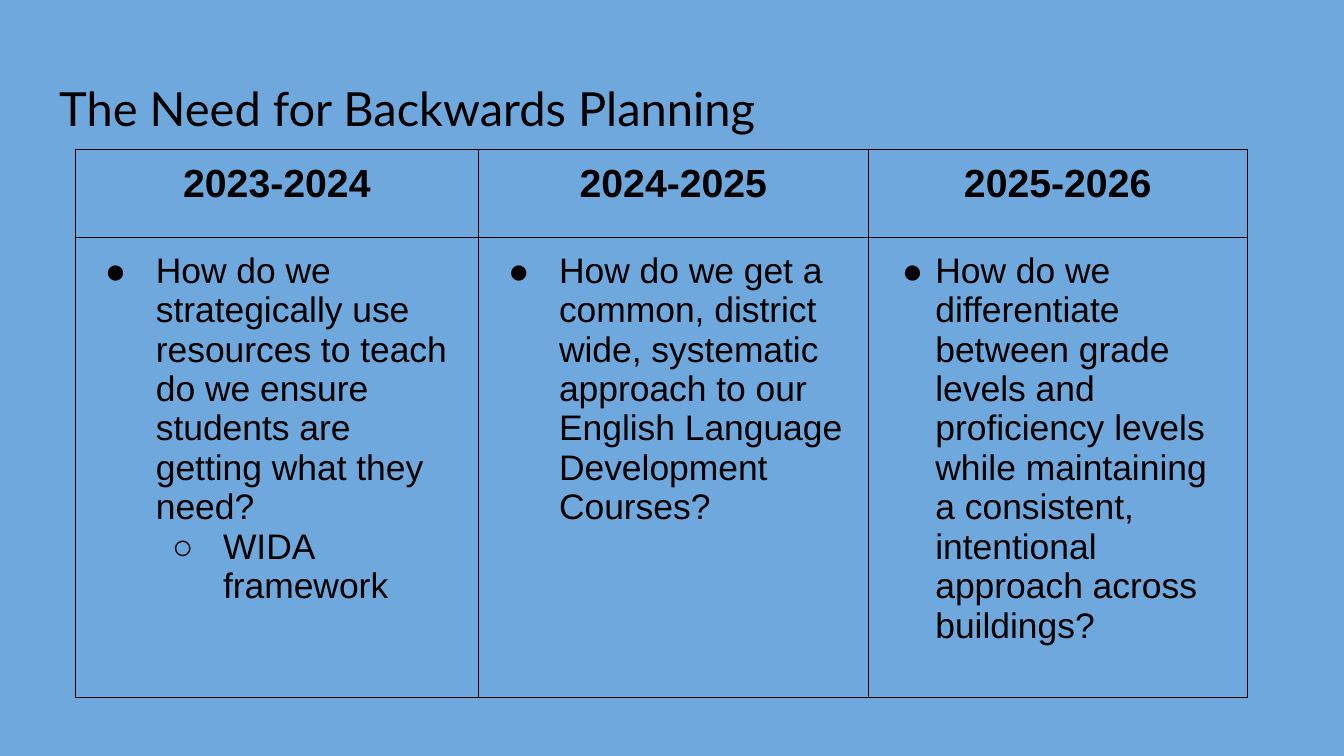
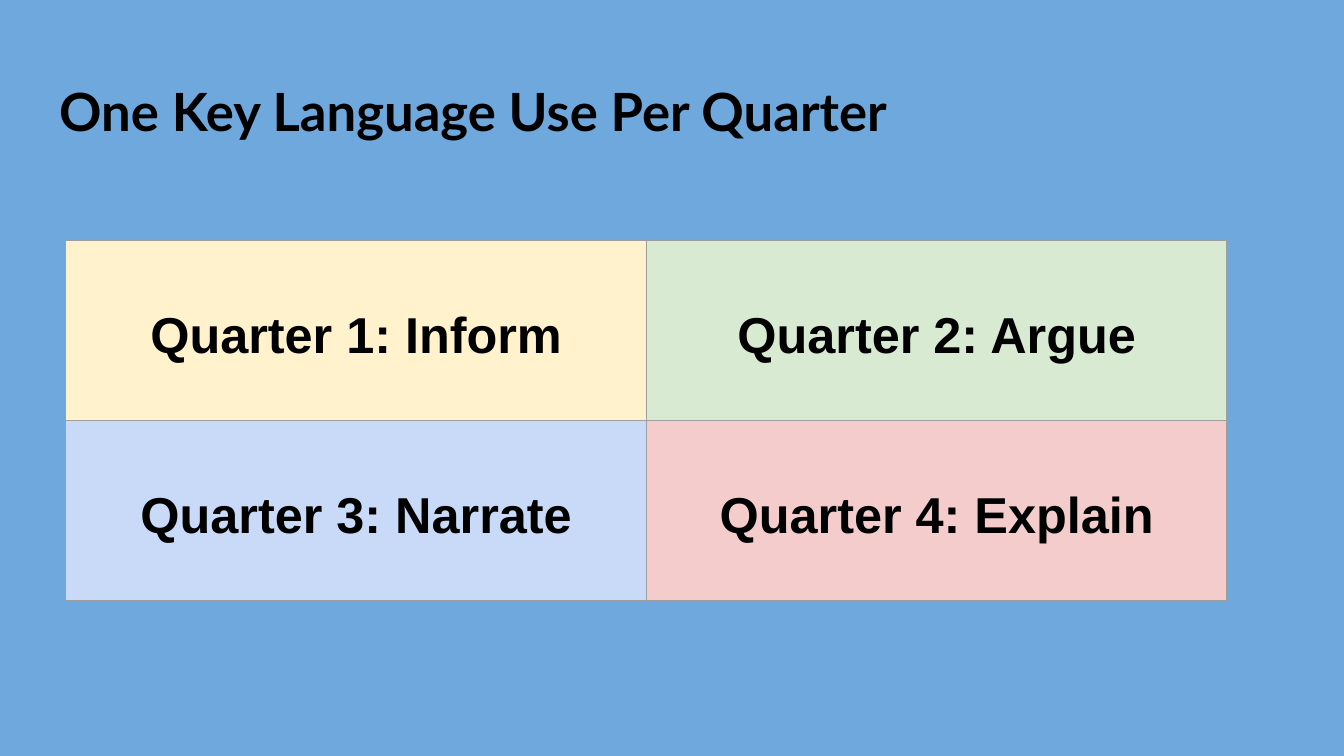
from lxml import etree
from pptx import Presentation
from pptx import util as u
from pptx.dml.color import RGBColor
from pptx.enum import text
from pptx.oxml.ns import qn

# Shared look
SKY = RGBColor(0x6F, 0xA8, 0xDC)
BLACK = RGBColor(0, 0, 0)
GREY = RGBColor(0x9E, 0x9E, 0x9E)
CREAM = RGBColor(0xFF, 0xF2, 0xCC)
GREEN = RGBColor(0xD9, 0xEA, 0xD3)
BLUE = RGBColor(0xC9, 0xDA, 0xF8)
PINK = RGBColor(0xF4, 0xCC, 0xCC)
SLIDE_W = 10
SLIDE_H = SLIDE_W * 9 / 16
TITLE_BOX = (0.34, 0.49, 9.32, 0.63)
TITLE_FONT, BODY_FONT = "Lato", "Arial"
PAD = 0.1
BULLETS = "●○"

# Content: year, left padding, bullet step, hanging indent, (level, question)
PLAN_TITLE = "The Need for Backwards Planning"
PLAN_COLS, PLAN_ROWS = (3, 2.9, 2.82), (0.66, 3.42)
YEARS = [
    ("2023-2024", PAD, 0.5, -0.38, [
        (0, "How do we strategically use resources to teach do we ensure "
            "students are getting what they need?"),
        (1, "WIDA framework")]),
    ("2024-2025", PAD, 0.5, -0.38, [
        (0, "How do we get a common, district wide, systematic approach to "
            "our English Language Development Courses?")]),
    ("2025-2026", 0.25, 0.25, -0.26, [
        (0, "How do we differentiate between grade levels and proficiency "
            "levels while maintaining a consistent, intentional approach "
            "across buildings?")]),
]

QUARTER_TITLE = "One Key Language Use Per Quarter"
QUARTER_COLS, QUARTER_ROWS = (4.32,) * 2, (1.34,) * 2
QUARTERS = [("Inform", CREAM), ("Argue", GREEN),
            ("Narrate", BLUE), ("Explain", PINK)]


def add_run(p, words, size, font=BODY_FONT, bold=False):
    r = p.add_run()
    r.text = words
    r.font.name, r.font.size, r.font.bold = font, u.Pt(size), bold
    r.font.color.rgb = BLACK


def add_slide(prs, title, size, bold=False):
    s = prs.slides.add_slide(prs.slide_layouts[5])
    sp = s.shapes.title
    sp.left, sp.top, sp.width, sp.height = map(u.Inches, TITLE_BOX)
    tf = sp.text_frame
    tf.margin_left = tf.margin_top = tf.margin_right = tf.margin_bottom = u.Inches(PAD)
    tf.vertical_anchor = text.MSO_ANCHOR.TOP
    tf.auto_size = text.MSO_AUTO_SIZE.NONE
    p = tf.paragraphs[0]
    p.alignment = text.PP_ALIGN.LEFT
    add_run(p, title, size, TITLE_FONT, bold)
    return s


def add_grid(s, left, top, cols, rows, line):
    """Unfilled table with a thin border round every cell."""
    table = s.shapes.add_table(len(rows), len(cols), *map(
        u.Inches, (left, top, sum(cols), sum(rows)))).table
    table.first_row = table.horz_banding = False
    for col, width in zip(table.columns, cols):
        col.width = u.Inches(width)
    for row, height in zip(table.rows, rows):
        row.height = u.Inches(height)
    for cell in table.iter_cells():
        cell.margin_left = cell.margin_right = u.Inches(PAD)
        cell.margin_top = cell.margin_bottom = u.Inches(PAD)
        tc_pr = cell._tc.get_or_add_tcPr()
        for side in ("a:lnL", "a:lnR", "a:lnT", "a:lnB"):
            ln = etree.SubElement(tc_pr, qn(side), w=str(u.Pt(0.75)))
            fill = etree.SubElement(ln, qn("a:solidFill"))
            etree.SubElement(fill, qn("a:srgbClr"), val=str(line))
        cell.fill.background()
    return table


def add_heading(cell, words, size):
    p = cell.text_frame.paragraphs[0]
    p.alignment = text.PP_ALIGN.CENTER
    add_run(p, words, size, bold=True)


def set_bullet(p, level, step, hang):
    p.level = level
    p_pr = p._p.get_or_add_pPr()
    p_pr.set("marL", str(u.Inches(step * (level + 1))))
    p_pr.set("indent", str(u.Inches(hang)))
    color = etree.SubElement(p_pr, qn("a:buClr"))
    etree.SubElement(color, qn("a:srgbClr"), val=str(BLACK))
    etree.SubElement(p_pr, qn("a:buFont"), typeface=BODY_FONT)
    etree.SubElement(p_pr, qn("a:buChar"), char=BULLETS[level])


def build_plan(prs):
    s = add_slide(prs, PLAN_TITLE, 25.2)
    table = add_grid(s, 0.56, 1.11, PLAN_COLS, PLAN_ROWS, BLACK)
    for c, (year, pad, step, hang, questions) in enumerate(YEARS):
        head, body = table.cell(0, c), table.cell(1, c)
        body.margin_left = u.Inches(pad)
        add_heading(head, year, 21)
        tf = body.text_frame
        for i, (level, question) in enumerate(questions):
            p = tf.add_paragraph() if i else tf.paragraphs[0]
            set_bullet(p, level, step, hang)
            add_run(p, question, 19)


def build_quarters(prs):
    s = add_slide(prs, QUARTER_TITLE, 28.2, bold=True)
    table = add_grid(s, 0.49, 1.79, QUARTER_COLS, QUARTER_ROWS, GREY)
    for i, (cell, (use, color)) in enumerate(zip(table.iter_cells(), QUARTERS), 1):
        cell.margin_top = u.Inches(0.5)
        cell.fill.solid()
        cell.fill.fore_color.rgb = color
        add_heading(cell, f"Quarter {i}: {use}", 27)


def main():
    prs = Presentation()
    prs.slide_width, prs.slide_height = u.Inches(SLIDE_W), u.Inches(SLIDE_H)
    background = prs.slide_master.background.fill
    background.solid()
    background.fore_color.rgb = SKY
    build_plan(prs)
    build_quarters(prs)
    prs.save("out.pptx")


if __name__ == "__main__":
    main()
